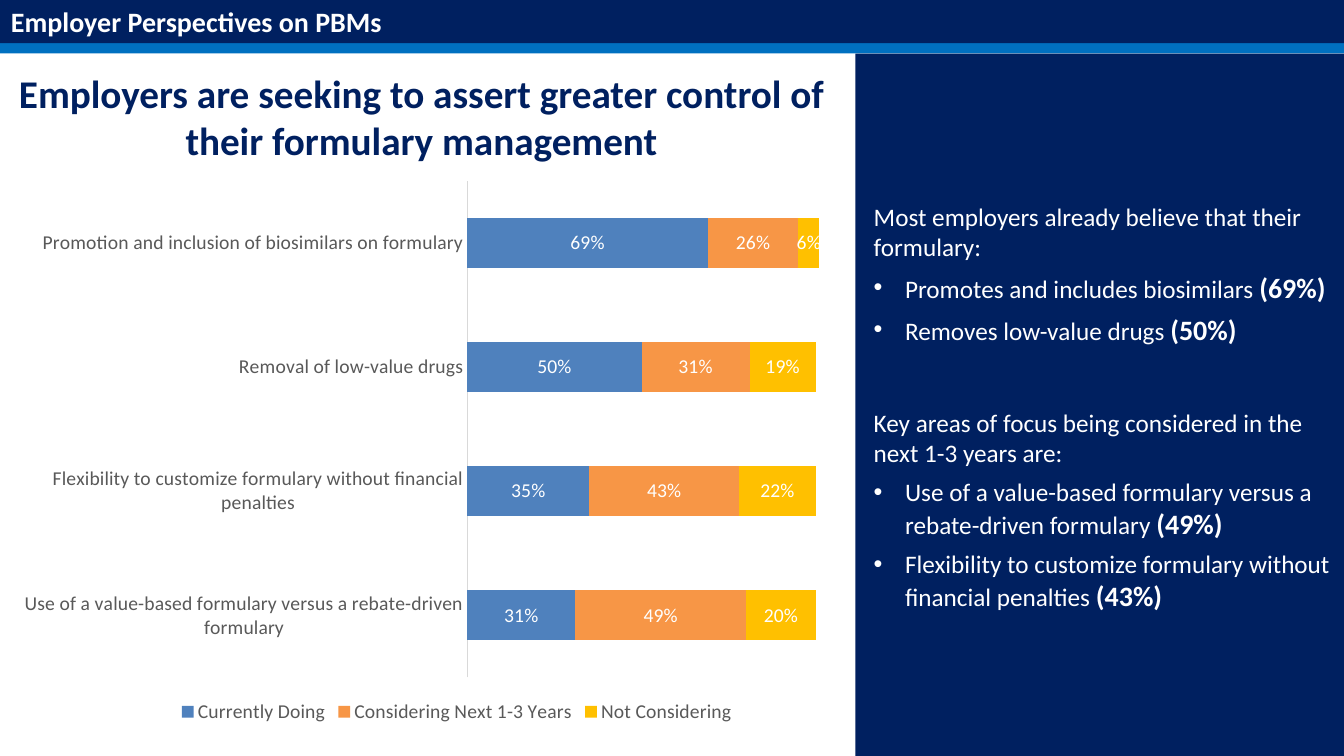
from lxml.etree import SubElement
from pptx import Presentation
from pptx.chart.data import CategoryChartData
from pptx.dml.color import RGBColor
from pptx.enum.chart import XL_CHART_TYPE, XL_LABEL_POSITION, XL_LEGEND_POSITION, XL_TICK_MARK
from pptx.enum.shapes import MSO_SHAPE
from pptx.enum.text import PP_ALIGN
from pptx.oxml import parse_xml
from pptx.oxml.ns import nsdecls, qn
from pptx.util import Cm, Pt

NAVY, BLUE, WHITE, GREY = "002060", "0070C0", "FFFFFF", "595959"


def style(font, color, **format):
    font.color.rgb = RGBColor.from_string(color)
    for key, value in {"name": "Calibri", **format}.items():
        setattr(font, key, value)


def add_text(box, lines):
    """Each line is (paragraph format, runs); each run is (text, font format)."""
    frame = slide.shapes.add_textbox(*map(Cm, box)).text_frame
    frame.word_wrap = True
    for i, (format, runs) in enumerate(lines):
        para = frame.add_paragraph() if i else frame.paragraphs[0]
        for key, value in format.items():
            setattr(para, key, value)
        for text, look in runs:
            run = para.add_run()
            run.text = text
            style(run.font, **look)
    return frame


deck = Presentation()
deck.slide_width, deck.slide_height = Cm(33.87), Cm(19.05)
slide = deck.slides.add_slide(deck.slide_layouts[6])

# Header bands and side panel
for box, color in [
    ((0, 1.09, 33.87, 0.26), BLUE),
    ((0, 0, 33.87, 1.09), NAVY),
    ((21.56, 1.35, 12.31, 17.7), NAVY),
]:
    band = slide.shapes.add_shape(MSO_SHAPE.RECTANGLE, *map(Cm, box))
    band.shadow.inherit = False
    band.fill.solid()
    band.fill.fore_color.rgb = RGBColor.from_string(color)
    band.line.fill.background()

# Headings
for box, text, color, size in [
    ((-0.36, 0, 10.62, 1.12), "Employer Perspectives on PBMs", WHITE, 20),
    ((0.18, 1.63, 20.88, 2.64),
     "Employers are seeking to assert greater control of their formulary management",
     NAVY, 28),
]:
    look = {"color": color, "size": Pt(size), "bold": True}
    add_text(box, [({"alignment": PP_ALIGN.CENTER}, [(text, look)])])

# Stacked bar chart
data = CategoryChartData(number_format="0%")
data.categories = [
    "Use of a value-based formulary versus a rebate-driven formulary",
    "Flexibility to customize formulary without financial penalties",
    "Removal of low-value drugs",
    "Promotion and inclusion of biosimilars on formulary",
]
series = [
    ("Currently Doing", (0.31, 0.35, 0.5, 0.69), "4F81BD"),
    ("Considering Next 1-3 Years", (0.49, 0.43, 0.31, 0.26), "F79646"),
    ("Not Considering", (0.2, 0.22, 0.19, 0.06), "FFC000"),
]
for name, values, color in series:
    data.add_series(name, values)
chart = slide.shapes.add_chart(
    XL_CHART_TYPE.BAR_STACKED, Cm(0.18), Cm(4.27), Cm(22.66), Cm(14.07), data
).chart
chart.has_title = False
style(chart.font, "000000", size=Pt(14))
plot = chart.plots[0]
for key, value in {"gap_width": 150, "overlap": 100, "vary_by_categories": False}.items():
    setattr(plot, key, value)
for bar, (name, values, color) in zip(plot.series, series):
    bar.format.fill.solid()
    bar.format.fill.fore_color.rgb = RGBColor.from_string(color)
    labels = bar.data_labels
    for key, value in {
        "show_value": True,
        "number_format": "0%",
        "number_format_is_linked": False,
        "position": XL_LABEL_POSITION.CENTER,
    }.items():
        setattr(labels, key, value)
    style(labels.font, WHITE, size=Pt(14))

# Axes and legend
axis = chart.category_axis
axis.major_tick_mark = XL_TICK_MARK.NONE
axis.format.line.width = Pt(0.75)
axis.format.line.color.rgb = RGBColor.from_string("D9D9D9")
style(axis.tick_labels.font, GREY, size=Pt(14))
for key, value in {
    "visible": False,
    "has_major_gridlines": False,
    "minimum_scale": 0,
    "maximum_scale": 1.2,
}.items():
    setattr(chart.value_axis, key, value)
chart.has_legend = True
chart.legend.position = XL_LEGEND_POSITION.BOTTOM
chart.legend.include_in_layout = False
style(chart.legend.font, GREY, size=Pt(14))

# Plot area, as shares of the chart
area = chart._chartSpace.chart.plotArea
for old in area.findall(qn("c:layout")):
    area.remove(old)
layout = parse_xml(f"<c:layout {nsdecls('c')}><c:manualLayout/></c:layout>")
area.insert(0, layout)
for tag, value in [
    ("layoutTarget", "inner"), ("xMode", "edge"), ("yMode", "edge"),
    ("x", 0.512), ("y", 0.02), ("w", 0.465), ("h", 0.89),
]:
    SubElement(layout[0], qn(f"c:{tag}")).set("val", str(value))

# Side panel text
plain = {"color": WHITE, "size": Pt(18)}
strong = {"color": WHITE, "size": Pt(20), "bold": True}
lines = []
for gap, intro, points in [
    (0, "Most employers already believe that their formulary:", [
        ("Promotes and includes biosimilars ", "(69%)"),
        ("Removes low-value drugs ", "(50%)"),
    ]),
    (44, "Key areas of focus being considered in the next 1-3 years are:", [
        ("Use of a value-based formulary versus a rebate-driven formulary ", "(49%)"),
        ("Flexibility to customize formulary without financial penalties ", "(43%)"),
    ]),
]:
    lines.append(({"space_before": Pt(gap)}, [(intro, plain)]))
    for text, share in points:
        lines.append(({"space_before": Pt(6)}, [(text, plain), (share, strong)]))
frame = add_text((21.77, 4.95, 12.24, 11.46), lines)

# Bullets on the lines that carry a share
for para in frame.paragraphs:
    if len(para.runs) == 2:
        props = para._p.get_or_add_pPr()
        props.set("marL", str(Cm(0.79)))
        props.set("indent", str(-Cm(0.79)))
        color = SubElement(props, qn("a:buClr"))
        SubElement(color, qn("a:srgbClr")).set("val", WHITE)
        SubElement(props, qn("a:buFont")).set("typeface", "Arial")
        SubElement(props, qn("a:buChar")).set("char", "•")

deck.save("out.pptx")
